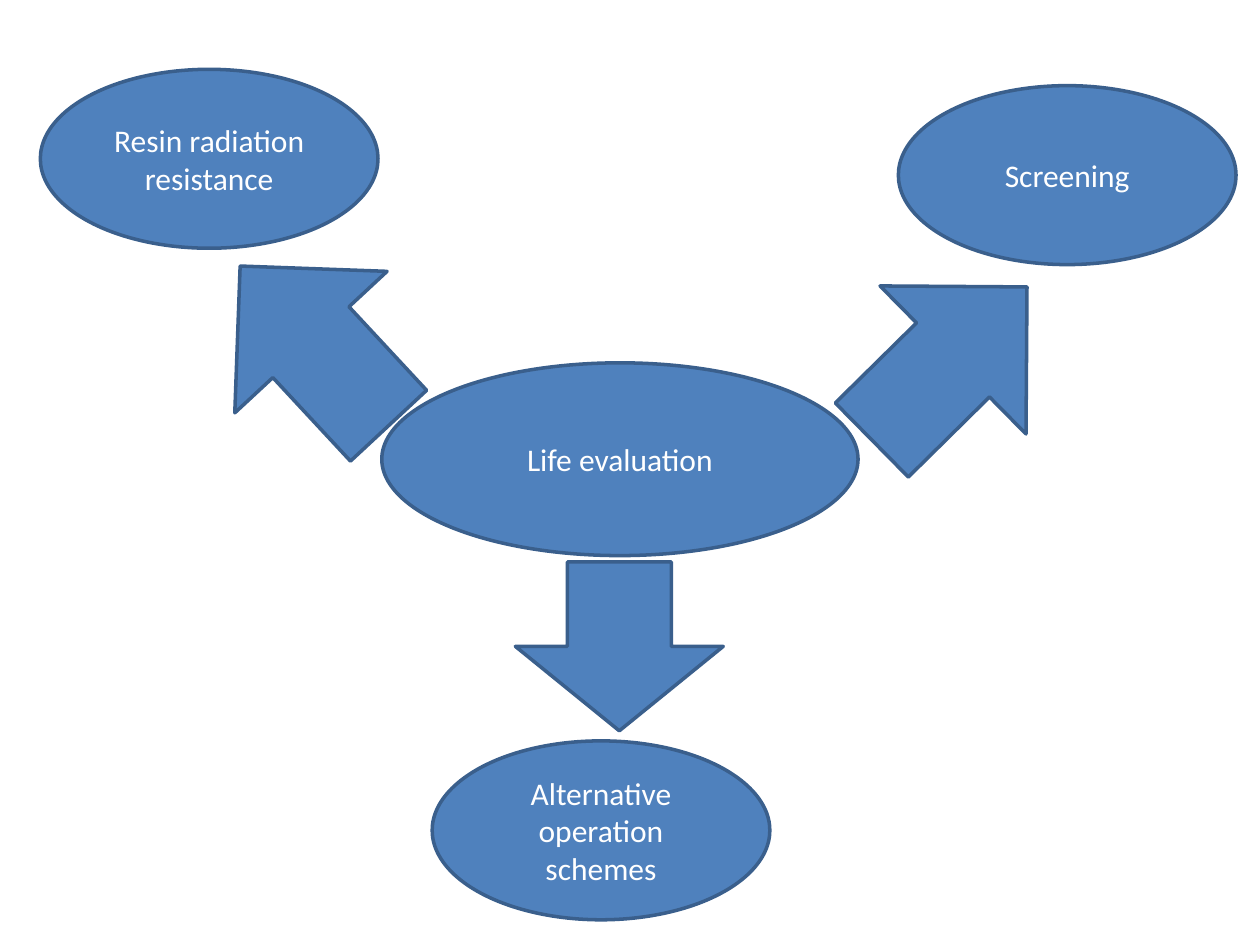
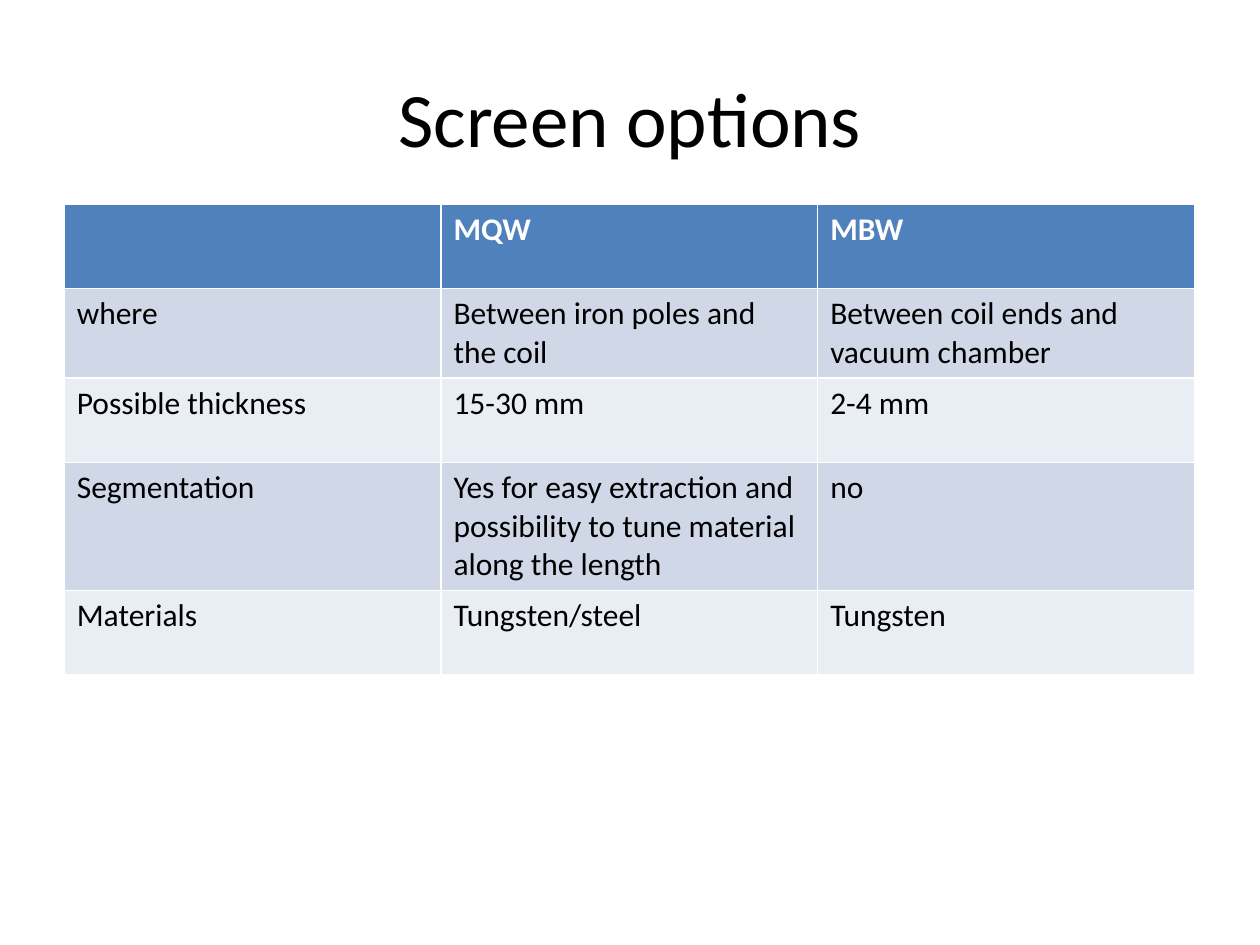
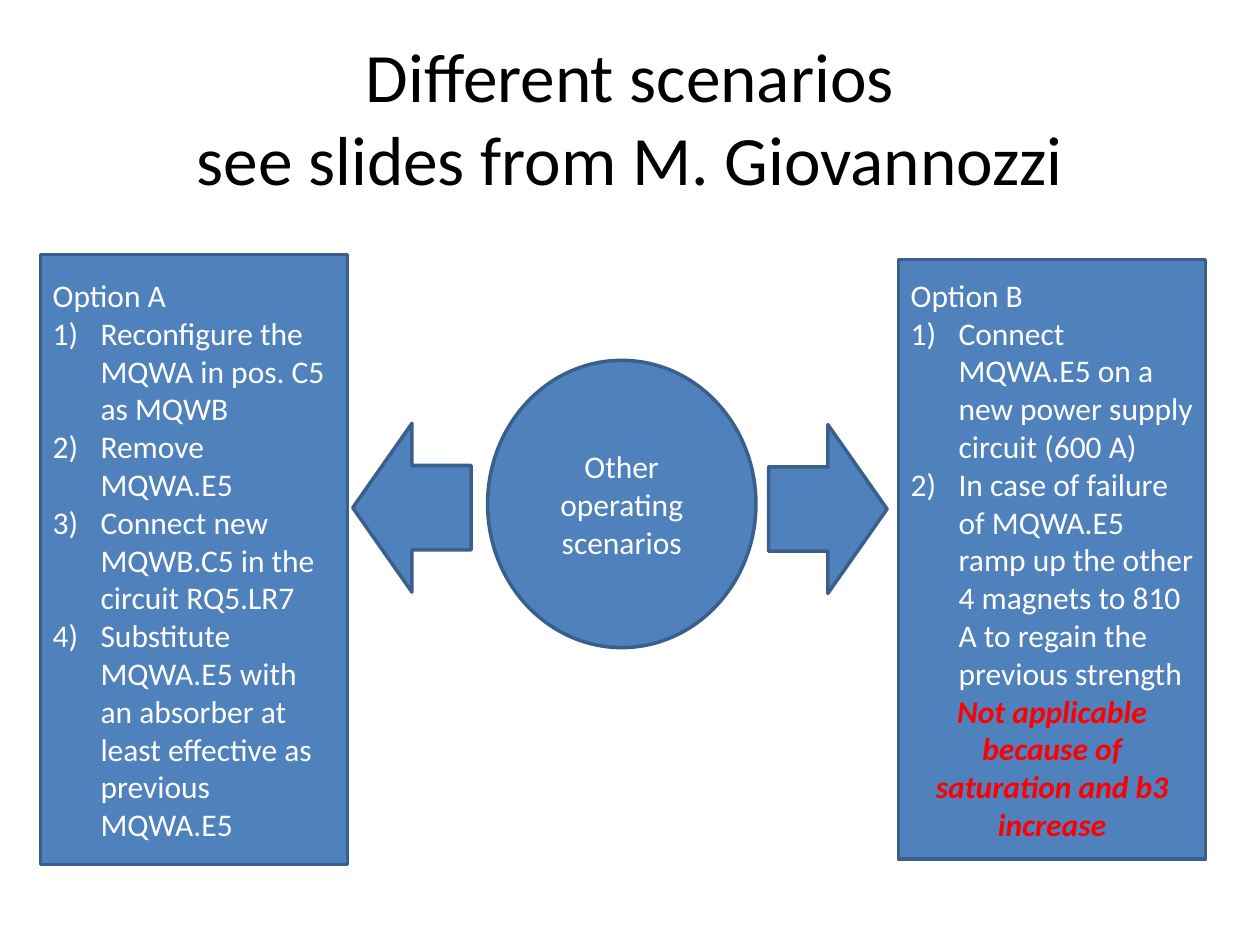
"""Build three slides on magnet life evaluation, screens and operating scenarios."""
from dataclasses import dataclass
from typing import Any

from lxml import etree
from pptx import Presentation
from pptx.dml.color import RGBColor
from pptx.enum.shapes import MSO_SHAPE
from pptx.enum.text import MSO_ANCHOR, PP_ALIGN
from pptx.oxml.ns import qn
from pptx.util import Pt

ELLIPSE, RECTANGLE = MSO_SHAPE.OVAL, MSO_SHAPE.RECTANGLE
UP_ARROW, LEFT_ARROW = MSO_SHAPE.UP_ARROW, MSO_SHAPE.LEFT_ARROW
LEFT, CENTER = PP_ALIGN.LEFT, PP_ALIGN.CENTER
MIDDLE = MSO_ANCHOR.MIDDLE

EMU_PER_PX = 9144
TITLE_ONLY, BLANK = 5, 6
LIST_INDENT = 38


@dataclass(frozen=True)
class Theme:
    """Hold the colours and type sizes of the deck."""
    fill: str = "4F81BD"
    outline: str = "3A5F8C"
    light: str = "FFFFFF"
    dark: str = "000000"
    warning: str = "FF0000"
    bands: tuple[str, str] = ("D0D8E8", "E9EDF4")
    font: str = "Calibri"
    title_size: float = 44
    long_title_size: float = 39.6
    body_size: float = 18
    line_width: float = 2


THEME = Theme()


@dataclass(frozen=True)
class Box:
    """Place a rectangle in px."""
    left: int
    top: int
    width: int
    height: int

    def emu(self) -> tuple[int, ...]:
        """Return the four lengths in EMU."""
        return tuple(length * EMU_PER_PX for length in (self.left, self.top, self.width, self.height))


@dataclass(frozen=True)
class Line:
    """Describe one paragraph."""
    text: str
    align: Any = LEFT
    numbered: bool = False
    warning: bool = False


@dataclass(frozen=True)
class Figure:
    """Describe one filled shape with its text."""
    preset: Any
    box: Box
    lines: tuple[Line, ...] = ()
    rotation: float = 0


def bubble(text: str, box: Box) -> Figure:
    """Describe an ellipse with a centred label."""
    return Figure(ELLIPSE, box, (Line(text, CENTER),))


def option(name: str, box: Box, steps: tuple[str, ...], remark: tuple[Line, ...] = ()) -> Figure:
    """Describe an option panel with numbered steps."""
    numbered = tuple(Line(step, numbered=True) for step in steps)
    return Figure(RECTANGLE, box, (Line(name), *numbered, *remark))


TITLE_BOX = Box(50, 30, 900, 125)

LIFE_FIGURES = (
    bubble("Life evaluation", Box(303, 288, 378, 153)),
    Figure(UP_ARROW, Box(167, 188, 165, 173), rotation=317.1),
    Figure(UP_ARROW, Box(671, 202, 165, 173), rotation=45.4),
    Figure(UP_ARROW, Box(409, 446, 165, 134), rotation=180),
    bubble("Resin radiation resistance", Box(32, 55, 268, 142)),
    bubble("Screening", Box(713, 68, 268, 142)),
    bubble("Alternative operation schemes", Box(343, 588, 268, 142)),
)

SCREEN_BOX = Box(51, 162, 897, 335)
SCREEN_ROWS = (
    ("", "MQW", "MBW"),
    ("where", "Between iron poles and the coil", "Between coil ends and vacuum chamber"),
    ("Possible thickness", "15-30 mm", "2-4 mm"),
    ("Segmentation", "Yes for easy extraction and possibility to tune material along the length", "no"),
    ("Materials", "Tungsten/steel", "Tungsten"),
)

SCENARIO_FIGURES = (
    bubble("Other operating scenarios", Box(387, 286, 213, 228)),
    Figure(LEFT_ARROW, Box(280, 336, 94, 134)),
    Figure(LEFT_ARROW, Box(610, 337, 94, 134), rotation=180),
    option("Option A", Box(32, 202, 244, 484), (
        "Reconfigure the MQWA in pos. C5 as MQWB",
        "Remove MQWA.E5",
        "Connect new MQWB.C5 in the circuit RQ5.LR7",
        "Substitute MQWA.E5 with an absorber at least effective as previous MQWA.E5",
    )),
    option("Option B", Box(713, 206, 244, 476), (
        "Connect MQWA.E5 on a new power supply circuit (600 A)",
        "In case of failure of MQWA.E5 ramp up the other 4 magnets to 810 A to regain the previous strength",
    ), (Line("Not applicable because of saturation and b3 increase", CENTER, warning=True),)),
)


def format_font(font: Any, color: str, size: float = THEME.body_size, **styles: bool) -> None:
    """Apply the deck font with a colour, a size and styles."""
    values = {"name": THEME.font, "size": Pt(size), **styles}
    for name, value in values.items():
        setattr(font, name, value)
    font.color.rgb = RGBColor.from_string(color)


def number_paragraph(paragraph: Any) -> None:
    """Give a paragraph automatic numbers and a hanging indent."""
    properties = paragraph._p.get_or_add_pPr()
    indent = LIST_INDENT * EMU_PER_PX
    properties.set("marL", str(indent))
    properties.set("indent", str(-indent))
    etree.SubElement(properties, qn("a:buFont"), typeface="+mj-lt")
    etree.SubElement(properties, qn("a:buAutoNum"), type="arabicParenR")


def write_lines(text_frame: Any, lines: tuple[Line, ...]) -> None:
    """Write the paragraphs of a shape."""
    text_frame.word_wrap = True
    text_frame.vertical_anchor = MIDDLE
    for index, line in enumerate(lines):
        paragraph = text_frame.add_paragraph() if index else text_frame.paragraphs[0]
        paragraph.alignment = line.align
        if line.numbered:
            number_paragraph(paragraph)
        run = paragraph.add_run()
        run.text = line.text
        color = THEME.warning if line.warning else THEME.light
        format_font(run.font, color, bold=line.warning, italic=line.warning)


def draw_figure(slide: Any, figure: Figure) -> None:
    """Draw one filled and outlined shape."""
    shape = slide.shapes.add_shape(figure.preset, *figure.box.emu())
    shape.rotation = figure.rotation
    shape.shadow.inherit = False
    shape.fill.solid()
    shape.fill.fore_color.rgb = RGBColor.from_string(THEME.fill)
    shape.line.color.rgb = RGBColor.from_string(THEME.outline)
    shape.line.width = Pt(THEME.line_width)
    write_lines(shape.text_frame, figure.lines)


def draw_title(slide: Any, lines: tuple[str, ...], size: float = THEME.title_size) -> None:
    """Fill the title placeholder with one or more lines."""
    title = slide.shapes.title
    title.left, title.top, title.width, title.height = TITLE_BOX.emu()
    title.text_frame.vertical_anchor = MIDDLE
    paragraph = title.text_frame.paragraphs[0]
    paragraph.alignment = CENTER
    for index, text in enumerate(lines):
        if index:
            paragraph.add_line_break()
        run = paragraph.add_run()
        run.text = text
        format_font(run.font, THEME.dark, size)


def draw_table(slide: Any, box: Box, rows: tuple[tuple[str, ...], ...]) -> None:
    """Draw a table with a header row and alternating bands."""
    table = slide.shapes.add_table(len(rows), len(rows[0]), *box.emu()).table
    for row_index, row in enumerate(rows):
        header = row_index == 0
        fill = THEME.fill if header else THEME.bands[(row_index - 1) % 2]
        for column_index, text in enumerate(row):
            cell = table.cell(row_index, column_index)
            cell.fill.solid()
            cell.fill.fore_color.rgb = RGBColor.from_string(fill)
            cell.text = text
            color = THEME.light if header else THEME.dark
            format_font(cell.text_frame.paragraphs[0].font, color, bold=header)
            for run in cell.text_frame.paragraphs[0].runs:
                format_font(run.font, color, bold=header)


def add_slide(presentation: Any, layout: int, figures: tuple[Figure, ...] = ()) -> Any:
    """Add a slide and draw its figures from back to front."""
    slide = presentation.slides.add_slide(presentation.slide_layouts[layout])
    for figure in figures:
        draw_figure(slide, figure)
    return slide


def main() -> None:
    """Build and save the presentation."""
    presentation = Presentation()
    presentation.slide_width = 1000 * EMU_PER_PX
    presentation.slide_height = 750 * EMU_PER_PX

    add_slide(presentation, BLANK, LIFE_FIGURES)

    screens = add_slide(presentation, TITLE_ONLY)
    draw_title(screens, ("Screen options",))
    draw_table(screens, SCREEN_BOX, SCREEN_ROWS)

    scenarios = add_slide(presentation, TITLE_ONLY, SCENARIO_FIGURES)
    draw_title(scenarios, ("Different scenarios", "see slides from M. Giovannozzi"), THEME.long_title_size)

    presentation.save("out.pptx")


if __name__ == "__main__":
    main()
